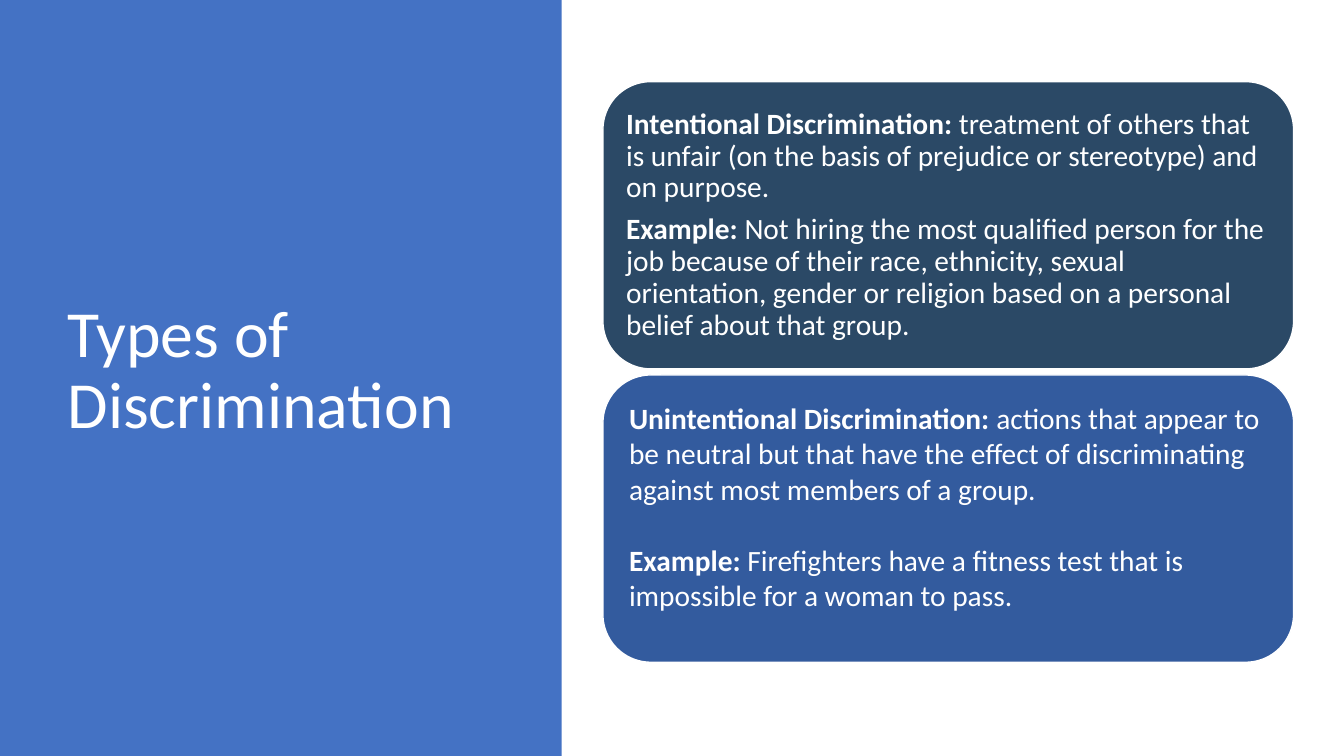
import pptx
import pptx.dml.color
import pptx.enum.shapes
import pptx.enum.text
import pptx.util

Inches = pptx.util.Inches
Pt = pptx.util.Pt
RGBColor = pptx.dml.color.RGBColor
Shape = pptx.enum.shapes.MSO_SHAPE
Anchor = pptx.enum.text.MSO_ANCHOR
Align = pptx.enum.text.PP_ALIGN
AutoSize = pptx.enum.text.MSO_AUTO_SIZE

WHITE = RGBColor(0xFF, 0xFF, 0xFF)
BLUE = RGBColor(0x44, 0x72, 0xC4)
NAVY = RGBColor(0x2B, 0x49, 0x66)
ROYAL = RGBColor(0x33, 0x5B, 0x9E)

CARD_LEFT, CARD_TOP, CARD_WIDTH, CARD_HEIGHT = 5.98, 0.81, 6.85, 2.85
CARD_STEP = 2.91

CARDS = [
    {
        "fill": NAVY,
        "text_at": (6.12, 0.95, 6.57, 2.57),
        "frame": {"vertical_anchor": Anchor.MIDDLE, "margin_left": Inches(0.09),
                  "margin_right": Inches(0.09), "margin_top": Inches(0.09),
                  "margin_bottom": Inches(0.09)},
        "para": {"line_spacing": 0.9, "space_after": Pt(7.4)},
        "lines": [
            ("Intentional Discrimination: ",
             "treatment of others that is unfair (on the basis of prejudice "
             "or stereotype) and on purpose."),
            ("Example: ",
             "Not hiring the most qualified person for the job because of "
             "their race, ethnicity, sexual orientation, gender or religion "
             "based on a personal belief about that group."),
        ],
    },
    {
        "fill": ROYAL,
        "text_at": (6.14, 3.92, 6.62, 2.83),
        "frame": {"vertical_anchor": Anchor.TOP},
        "para": {"space_after": Pt(25.6)},
        "lines": [
            ("Unintentional Discrimination: ",
             "actions that appear to be neutral but that have the effect of "
             "discriminating against most members of a group."),
            ("Example: ",
             "Firefighters have a fitness test that is impossible for a "
             "woman to pass."),
        ],
    },
]


def apply(target, formats):
    for name, value in formats.items():
        setattr(target, name, value)


class SlideBuilder:
    font_name = "Calibri"
    title_size = Pt(47)
    body_size = Pt(21)

    def __init__(self, deck):
        self.page = deck.slides.add_slide(deck.slide_layouts[5])

    def place(self, left, top, width, height):
        return [Inches(value) for value in (left, top, width, height)]

    def span(self, para, text, size, bold=False):
        span = para.add_run()
        span.text = text
        apply(span.font, {"name": self.font_name, "size": size, "bold": bold})
        span.font.color.rgb = WHITE

    def title(self, at, text):
        title = self.page.shapes.title
        apply(title, dict(zip(("left", "top", "width", "height"), self.place(*at))))
        apply(title.text_frame, {"word_wrap": True, "auto_size": AutoSize.NONE,
                                 "vertical_anchor": Anchor.MIDDLE})
        para = title.text_frame.paragraphs[0]
        apply(para, {"alignment": Align.LEFT, "line_spacing": 0.9})
        self.span(para, text, self.title_size)

    def block(self, kind, at, fill, outline=None):
        block = self.page.shapes.add_shape(kind, *self.place(*at))
        block.shadow.inherit = False
        block.fill.solid()
        block.fill.fore_color.rgb = fill
        if outline is None:
            block.line.fill.background()
        else:
            block.line.color.rgb = outline
            block.line.width = Pt(1)
        return block

    def side_panel(self, at, fill):
        panel = self.block(Shape.RECTANGLE, at, fill)
        self.page.shapes.title.element.addprevious(panel.element)

    def definition(self, at, lines, frame_format, para_format):
        box = self.page.shapes.add_textbox(*self.place(*at))
        frame = box.text_frame
        apply(frame, {"word_wrap": True, **frame_format})
        for index, (term, meaning) in enumerate(lines):
            para = frame.add_paragraph() if index else frame.paragraphs[0]
            apply(para, para_format)
            self.span(para, term, self.body_size, bold=True)
            self.span(para, meaning, self.body_size)


def main():
    deck = pptx.Presentation()
    apply(deck, {"slide_width": Inches(13.33), "slide_height": Inches(7.5)})
    builder = SlideBuilder(deck)
    builder.side_panel((0, 0, 5.57, 7.5), BLUE)
    builder.title((0.57, 0.68, 4.16, 6.02), "Types of Discrimination")
    for index, card in enumerate(CARDS):
        top = CARD_TOP + index * CARD_STEP
        builder.block(Shape.ROUNDED_RECTANGLE,
                      (CARD_LEFT, top, CARD_WIDTH, CARD_HEIGHT), card["fill"], WHITE)
        builder.definition(card["text_at"], card["lines"], card["frame"], card["para"])
    deck.save("out.pptx")


if __name__ == "__main__":
    main()
